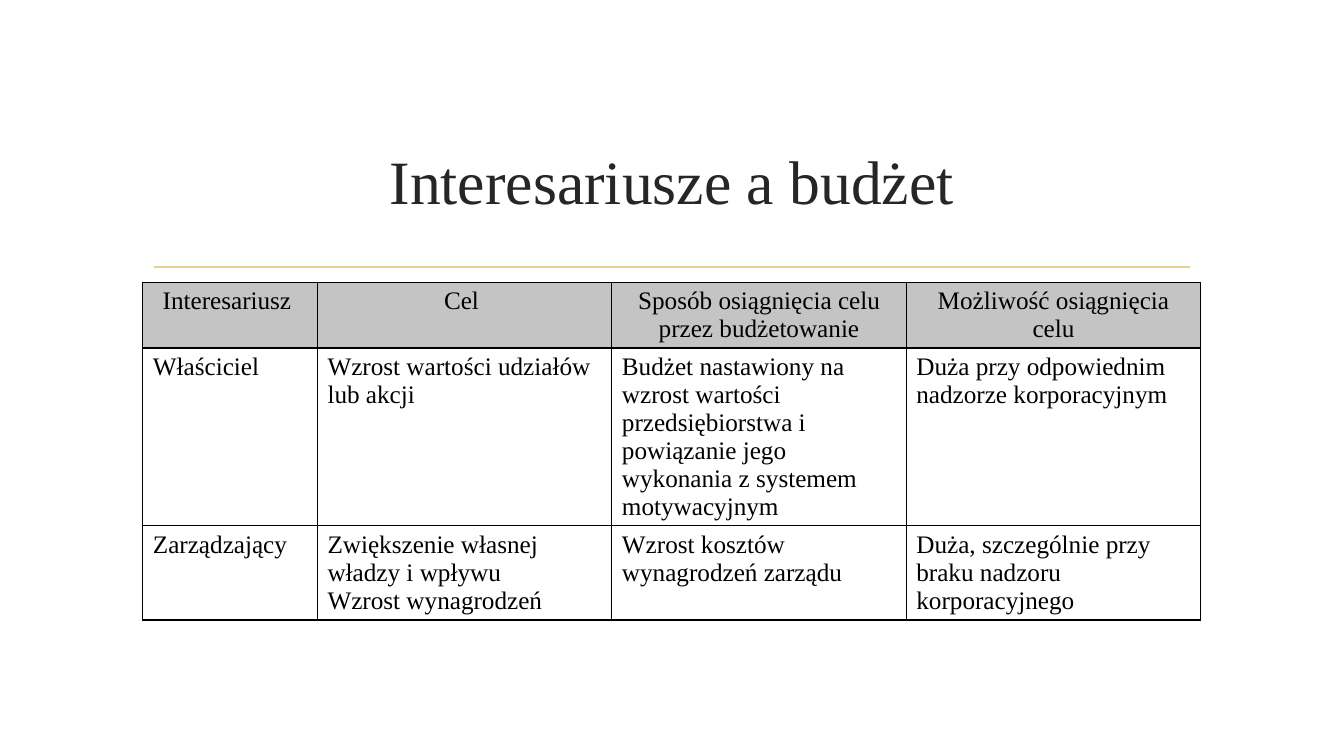
"""Build a slide with a table of stakeholders and their budget goals."""
from lxml.etree import SubElement
from pptx import Presentation
from pptx.dml.color import RGBColor
from pptx.enum.shapes import MSO_CONNECTOR
from pptx.enum.text import MSO_ANCHOR, PP_ALIGN
from pptx.oxml.ns import qn
from pptx.util import Cm, Pt

TITLE = "Interesariusze a budżet"
ROWS = [
    ("Interesariusz ", "Cel ", "Sposób osiągnięcia celu przez budżetowanie",
     "Możliwość osiągnięcia celu"),
    ("Właściciel", "Wzrost wartości udziałów lub akcji",
     "Budżet nastawiony na wzrost wartości przedsiębiorstwa i powiązanie "
     "jego wykonania z systemem motywacyjnym",
     "Duża przy odpowiednim nadzorze korporacyjnym"),
    ("Zarządzający", "Zwiększenie własnej władzy i wpływu\nWzrost wynagrodzeń",
     "Wzrost kosztów wynagrodzeń zarządu",
     "Duża, szczególnie przy braku nadzoru korporacyjnego"),
]
FONT = "Times New Roman"
BLACK, DARK, GREY, GOLD = "000000", "262626", "C4C4C4", "E8D191"
LEFT, WIDTH = 3.6, 26.67
COLUMN_WIDTHS = [4.4] + [7.42] * 3
ROW_HEIGHTS = [1.65, 4.48, 2.37]


def color(code):
    return RGBColor.from_string(code)


def write(frame, text, size=18, ink=BLACK, align=PP_ALIGN.LEFT):
    frame.word_wrap = True
    for index, line in enumerate(text.split("\n")):
        para = frame.add_paragraph() if index else frame.paragraphs[0]
        para.alignment = align
        span = para.add_run()
        span.text = line
        span.font.name, span.font.size = FONT, Pt(size)
        span.font.color.rgb = color(ink)


def add_borders(cell, width=1):
    properties = cell._tc.get_or_add_tcPr()
    for index, side in enumerate(("lnL", "lnR", "lnT", "lnB")):
        border = properties.makeelement(qn(f"a:{side}"), {"w": str(Pt(width))})
        fill = SubElement(border, qn("a:solidFill"))
        SubElement(fill, qn("a:srgbClr"), val=BLACK)
        properties.insert(index, border)


def add_title(page):
    title = page.shapes.title
    title.left, title.top = Cm(LEFT), Cm(2.72)
    title.width, title.height = Cm(WIDTH), Cm(3.63)
    title.text_frame.vertical_anchor = MSO_ANCHOR.MIDDLE
    write(title.text_frame, TITLE, size=44, ink=DARK, align=PP_ALIGN.CENTER)


def add_rule(page):
    rule = page.shapes.add_connector(
        MSO_CONNECTOR.STRAIGHT, Cm(3.89), Cm(6.73), Cm(30), Cm(6.73))
    rule.line.color.rgb = color(GOLD)
    rule.line.width = Pt(1.25)
    SubElement(rule._element.spPr, qn("a:effectLst"))


def add_stakeholders(page):
    table = page.shapes.add_table(
        len(ROWS), len(COLUMN_WIDTHS), Cm(LEFT), Cm(7.11),
        Cm(WIDTH), Cm(sum(ROW_HEIGHTS))).table
    table.horz_banding = False
    for column, width in zip(table.columns, COLUMN_WIDTHS):
        column.width = Cm(width)
    for row, height, texts in zip(table.rows, ROW_HEIGHTS, ROWS):
        row.height = Cm(height)
        header = texts is ROWS[0]
        for cell, text in zip(row.cells, texts):
            if header:
                cell.fill.solid()
                cell.fill.fore_color.rgb = color(GREY)
            else:
                cell.fill.background()
            add_borders(cell)
            write(cell.text_frame, text,
                  align=PP_ALIGN.CENTER if header else PP_ALIGN.LEFT)


def main():
    deck = Presentation()
    deck.slide_width, deck.slide_height = Cm(33.87), Cm(19.05)
    page = deck.slides.add_slide(deck.slide_layouts[5])
    add_title(page)
    add_rule(page)
    add_stakeholders(page)
    deck.save("out.pptx")


if __name__ == "__main__":
    main()
